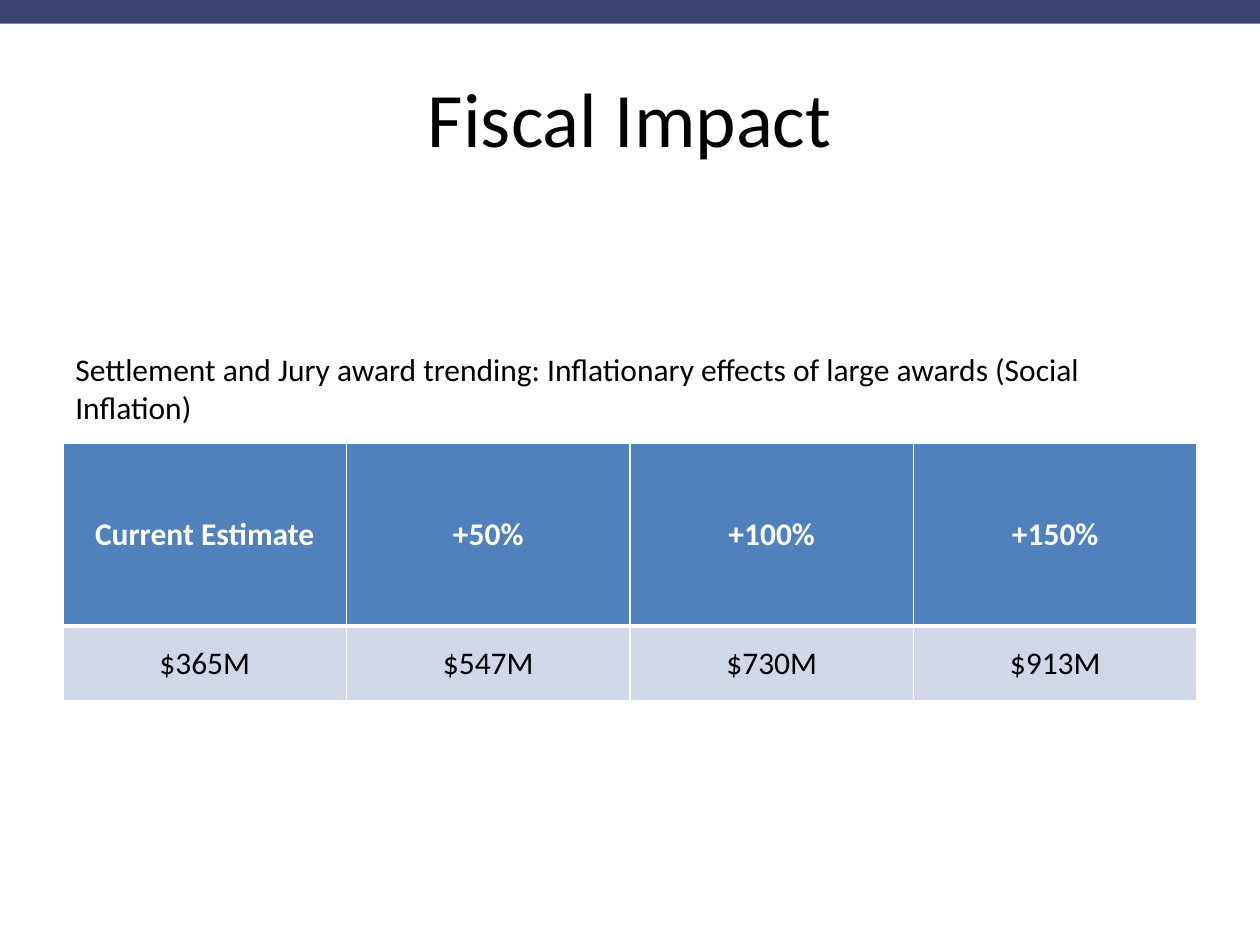
from lxml.etree import SubElement
from pptx import Presentation
from pptx.dml.color import RGBColor
from pptx.enum.shapes import MSO_SHAPE
from pptx.enum.text import MSO_ANCHOR, PP_ALIGN
from pptx.oxml.ns import qn
from pptx.util import Cm, Pt

BLACK = RGBColor(0x00, 0x00, 0x00)
WHITE = RGBColor(0xFF, 0xFF, 0xFF)
NAVY = RGBColor(0x3C, 0x44, 0x72)
HEADER_BLUE = RGBColor(0x4F, 0x81, 0xBD)
PALE_BLUE = RGBColor(0xD0, 0xD8, 0xE8)


def write(frame, text, align, size, color, bold=False):
    paragraph = frame.paragraphs[0]
    paragraph.alignment = align
    run = paragraph.add_run()
    run.text = text
    font_format = {"name": "Calibri", "size": Pt(size), "bold": bold}
    for attribute, value in font_format.items():
        setattr(run.font, attribute, value)
    run.font.color.rgb = color


def add_borders(cell, widths):
    properties = cell._tc.get_or_add_tcPr()
    for side, width in widths.items():
        line = SubElement(properties, qn(f"a:{side}"), w=str(Pt(width)))
        fill = SubElement(line, qn("a:solidFill"))
        SubElement(fill, qn("a:srgbClr"), val=str(WHITE))


presentation = Presentation()
presentation.slide_width, presentation.slide_height = Cm(25.4), Cm(19.05)
slide = presentation.slides.add_slide(presentation.slide_layouts[6])

# Band along the top edge
top_band = slide.shapes.add_shape(MSO_SHAPE.RECTANGLE, 0, 0, Cm(25.4), Cm(0.48))
top_band.shadow.inherit = False
top_band.fill.solid()
top_band.fill.fore_color.rgb = NAVY
top_band.line.fill.background()

# Title and table caption
texts = [
    ("Fiscal Impact", Cm(0.76), Cm(22.86), Cm(3.18),
     PP_ALIGN.CENTER, 44, MSO_ANCHOR.MIDDLE),
    ("Settlement and Jury award trending: Inflationary effects of large awards "
     "(Social Inflation)", Cm(6.93), Cm(22.63), Cm(1.8),
     PP_ALIGN.LEFT, 18, MSO_ANCHOR.TOP),
]
for text, top, width, height, align, size, anchor in texts:
    frame = slide.shapes.add_textbox(Cm(1.27), top, width, height).text_frame
    frame.word_wrap = True
    frame.vertical_anchor = anchor
    write(frame, text, align, size, BLACK)

# Estimates table
estimates = [
    ("Current Estimate", "+50%", "+100%", "+150%"),
    ("$365M", "$547M", "$730M", "$913M"),
]
# Row height, cell fill, text colour, bold, top and bottom border widths
row_formats = [
    (Cm(3.68), HEADER_BLUE, WHITE, True, 1, 3),
    (Cm(1.5), PALE_BLUE, BLACK, False, 3, 1),
]
table = slide.shapes.add_table(
    2, 4, Cm(1.27), Cm(8.94), Cm(22.86), Cm(5.18)).table
for column in table.columns:
    column.width = Cm(5.715)

for row, values, row_format in zip(table.rows, estimates, row_formats):
    row.height, fill, color, bold, top_line, bottom_line = row_format
    for cell, value in zip(row.cells, values):
        add_borders(cell, {"lnL": 1, "lnR": 1, "lnT": top_line, "lnB": bottom_line})
        cell.fill.solid()
        cell.fill.fore_color.rgb = fill
        cell.vertical_anchor = MSO_ANCHOR.MIDDLE
        write(cell.text_frame, value, PP_ALIGN.CENTER, 18, color, bold)

presentation.save("out.pptx")
